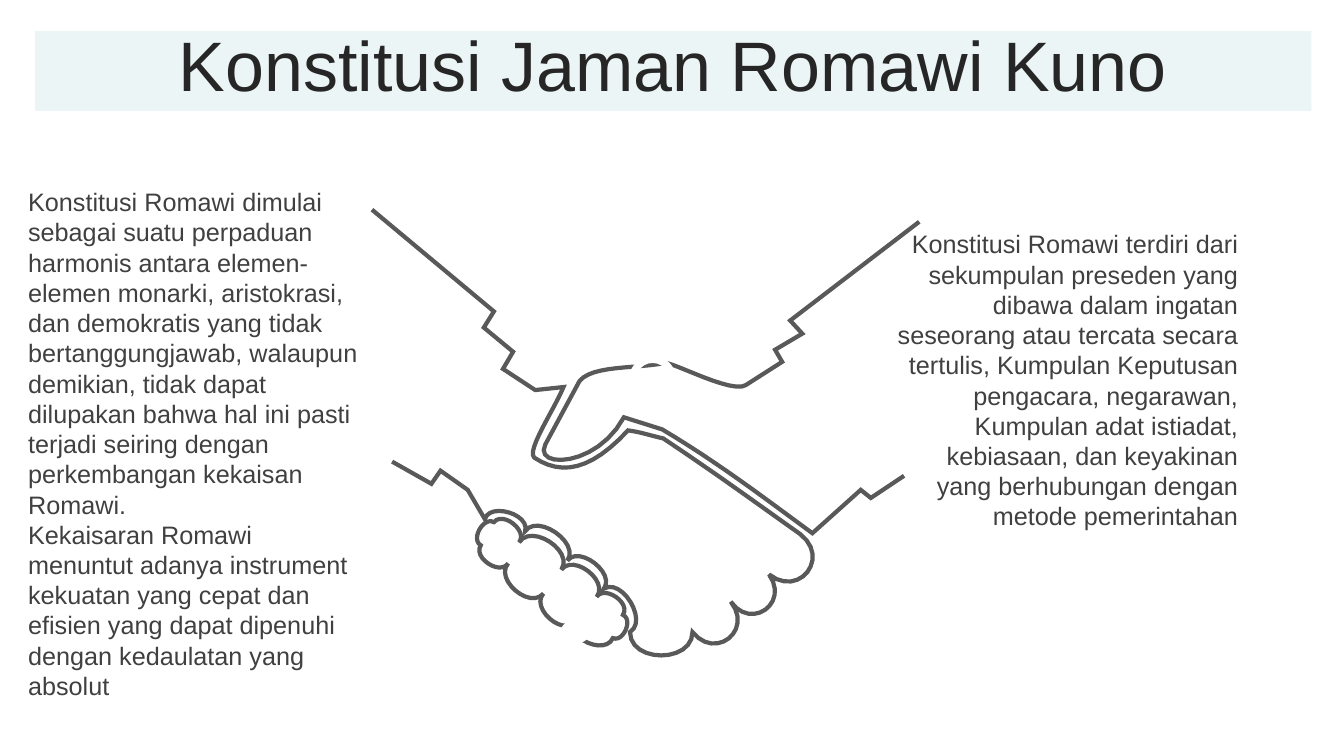
from lxml.etree import SubElement
from pptx import Presentation
from pptx.dml.color import RGBColor
from pptx.enum.shapes import MSO_SHAPE
from pptx.enum.text import MSO_ANCHOR, MSO_AUTO_SIZE, PP_ALIGN
from pptx.oxml.ns import qn
from pptx.util import Pt

# Content
TITLE = "Konstitusi Jaman Romawi Kuno"
LEFT = [
    "Konstitusi Romawi dimulai sebagai suatu perpaduan harmonis antara "
    "elemen-elemen monarki, aristokrasi, dan demokratis yang tidak "
    "bertanggungjawab, walaupun demikian, tidak dapat dilupakan bahwa hal ini "
    "pasti terjadi seiring dengan perkembangan kekaisan Romawi.",
    "Kekaisaran Romawi menuntut adanya instrument kekuatan yang cepat dan "
    "efisien yang dapat dipenuhi dengan kedaulatan yang absolut",
]
RIGHT = [
    "Konstitusi Romawi terdiri dari sekumpulan preseden yang dibawa dalam "
    "ingatan seseorang atau tercata secara tertulis, Kumpulan Keputusan "
    "pengacara, negarawan, Kumpulan adat istiadat, kebiasaan, dan keyakinan "
    "yang berhubungan dengan metode pemerintahan",
]
NOTES = [
    (LEFT, PP_ALIGN.LEFT, (13, 129.6, 252.7, 378)),
    (RIGHT, PP_ALIGN.RIGHT, (626.4, 159.8, 265, 225.4)),
]

FONT = "Arial"
PALE = RGBColor(0xEB, 0xF5, 0xF6)
DARK = RGBColor(0x26, 0x26, 0x26)
GREY = RGBColor(0x40, 0x40, 0x40)
LINE = RGBColor(0x59, 0x59, 0x59)
WHITE = RGBColor(0xFF, 0xFF, 0xFF)
GRID = 0.72  # points per unit of the hand drawing
STEPS = 12   # short lines per curve


def lobes(bulge, cusps):
    """Round knuckles between cusps; the sign of bulge picks the side."""
    curves = []
    for (ax, ay), (bx, by) in zip(cusps, cusps[1:]):
        out, up = bulge * (by - ay), bulge * (ax - bx)
        curves.append((ax + out, ay + up, bx + out, by + up, bx, by))
    return curves


# Hand parts: a pair is a corner, six numbers are a curve (two handles, end)
# Right arm: sleeve, back of hand, thumb, palm, cuff
SLEEVE = [(912, 220), (784, 318), (796, 331), (769, 347), (776, 359), (740, 382)]
BACK = [(727, 391, 669, 360, 660, 360), (632, 366, 588, 362, 575, 378)]
THUMB = [(541, 441), (529, 465, 592, 464, 619, 414)]
PALM = [(657, 426), (711, 458, 757, 493, 806, 529)]
CUFF = [(854, 486), (864, 494), (897, 472)]

# Left arm: sleeve, thumb gap, palm edge, then knuckles and cuff
ARM = [(369, 208), (490, 309), (480, 325), (509, 349), (499, 366), (531, 387)]
GAP = [(559, 384), (550, 406, 522, 447, 530, 454), (557, 472, 586, 467, 623, 427)]
EDGE = [(637, 429, 641, 431, 658, 435), (712, 471, 746, 496, 794, 530)]
FRONT = lobes(0.75, [(794, 530), (763, 570), (725, 597), (687, 627)])
LAST = lobes(0.5, [(687, 627), (625, 627)])
REAR = lobes(-0.42, [(625, 627), (599, 584), (563, 556), (521, 527), (481, 515)])
WRIST = [(464, 486), (437, 467), (428, 480), (389, 458)]

# Fingertips: one ring of knuckles
TIPS = [(477, 541), (504, 559), (539, 589), (570, 617), (608, 633),
        (618, 610), (592, 592), (557, 565), (515, 538), (490, 518), (477, 541)]

HANDS = [
    (SLEEVE + BACK + THUMB + PALM + CUFF, False),
    (ARM + GAP + EDGE + FRONT + LAST + REAR + WRIST, False),
    (TIPS[:1] + lobes(-0.45, TIPS), True),
]

# White icons over the hands: kind, box, turn
CLOCK = (MSO_SHAPE.DONUT, (449.3, 254.2, 33.8, 33.8), 0)
PURSE = (MSO_SHAPE.OVAL, (398.2, 440.6, 28.8, 18.7), 330)
RING = 0.15


def trace(parts):
    """Turn corners and curves into a list of points."""
    dots = parts[:1]
    for part in parts[1:]:
        if len(part) == 2:
            dots.append(part)
            continue
        a, b, c, d = dots[-1], part[:2], part[2:4], part[4:]
        for step in range(1, STEPS + 1):
            t = step / STEPS
            u = 1 - t
            dots.append(tuple(
                u**3 * p + 3 * u * u * t * q + 3 * u * t * t * r + t**3 * s
                for p, q, r, s in zip(a, b, c, d)))
    return [(Pt(x * GRID), Pt(y * GRID)) for x, y in dots]


def draw(shapes, parts, close):
    """Draw one open or closed hand outline."""
    dots = trace(parts)
    pen = shapes.build_freeform(*dots[0])
    pen.add_line_segments(dots[1:], close=close)
    hand = pen.convert_to_shape()
    hand.shadow.inherit = False
    hand.fill.background()
    hand.line.color.rgb = LINE
    hand.line.width = Pt(3)
    join = SubElement(hand.element.spPr.find(qn("a:ln")), qn("a:miter"))
    join.set("lim", "800000")


def block(shapes, kind, box, color):
    """Add a plain filled shape without line or shadow."""
    shape = shapes.add_shape(kind, *map(Pt, box))
    shape.shadow.inherit = False
    shape.fill.solid()
    shape.fill.fore_color.rgb = color
    shape.line.fill.background()
    return shape


def style(para, size, color, align):
    para.alignment = align
    para.font.name = FONT
    para.font.size = Pt(size)
    para.font.color.rgb = color


deck = Presentation()
deck.slide_width, deck.slide_height = Pt(960), Pt(540)
slide = deck.slides.add_slide(deck.slide_layouts[6])
shapes = slide.shapes

# Title band
band = block(shapes, MSO_SHAPE.RECTANGLE, (25.2, 22.3, 911.5, 56.9), PALE)
band.text_frame.vertical_anchor = MSO_ANCHOR.MIDDLE
head = band.text_frame.paragraphs[0]
head.text = TITLE
head.line_spacing = 0.8
style(head, 50, DARK, PP_ALIGN.CENTER)

# Handshake
group = shapes.add_group_shape()
for parts, close in HANDS:
    draw(group.shapes, parts, close)

# White icons
for kind, box, turn in (PURSE, CLOCK):
    icon = block(shapes, kind, box, WHITE)
    icon.rotation = turn
    if kind == MSO_SHAPE.DONUT:
        icon.adjustments[0] = RING

# Text on both sides
for texts, align, box in NOTES:
    frame = shapes.add_textbox(*map(Pt, box)).text_frame
    frame.word_wrap = True
    frame.auto_size = MSO_AUTO_SIZE.SHAPE_TO_FIT_TEXT
    frame.text = "\n".join(texts)
    for para in frame.paragraphs:
        style(para, 18, GREY, align)

deck.save("out.pptx")
